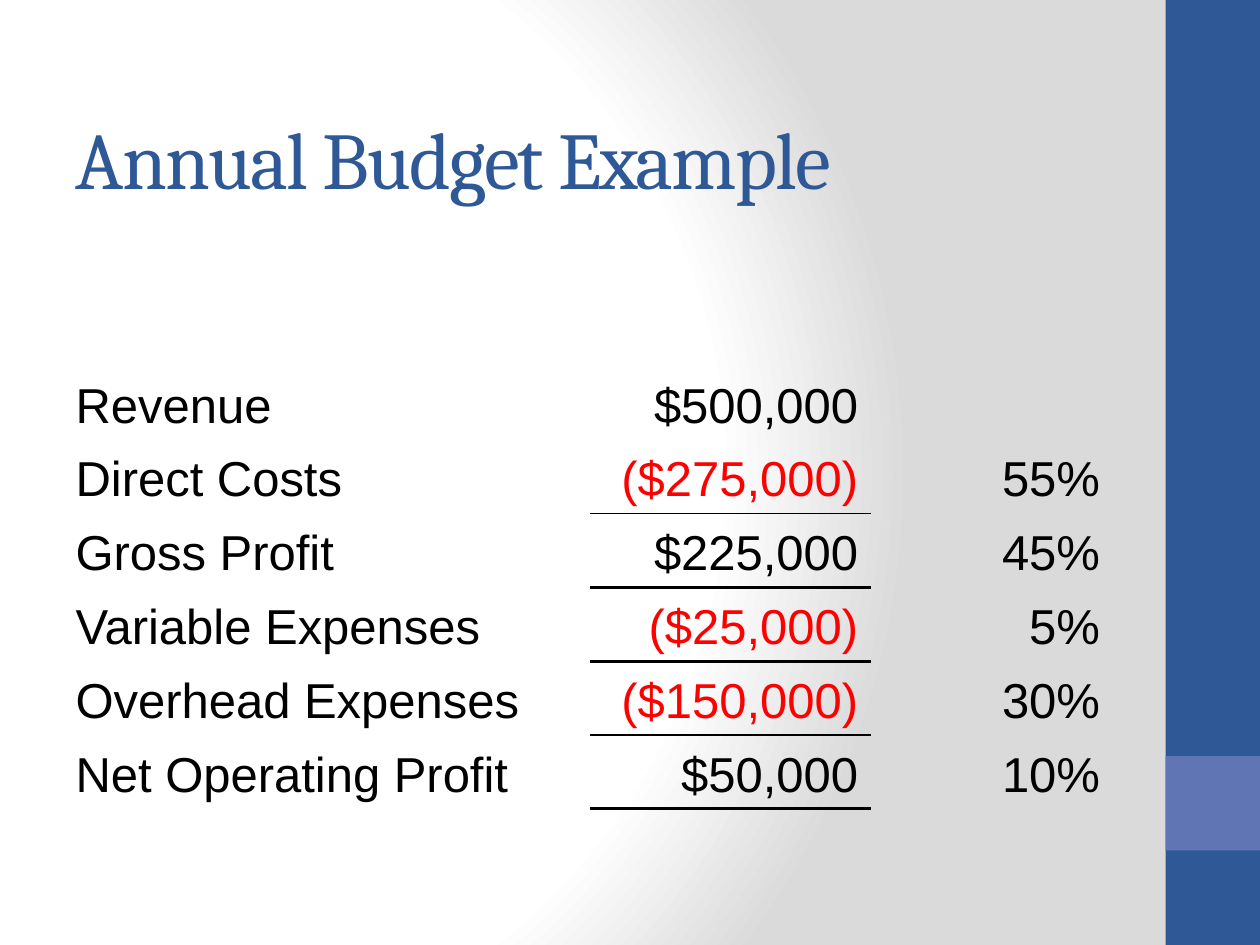
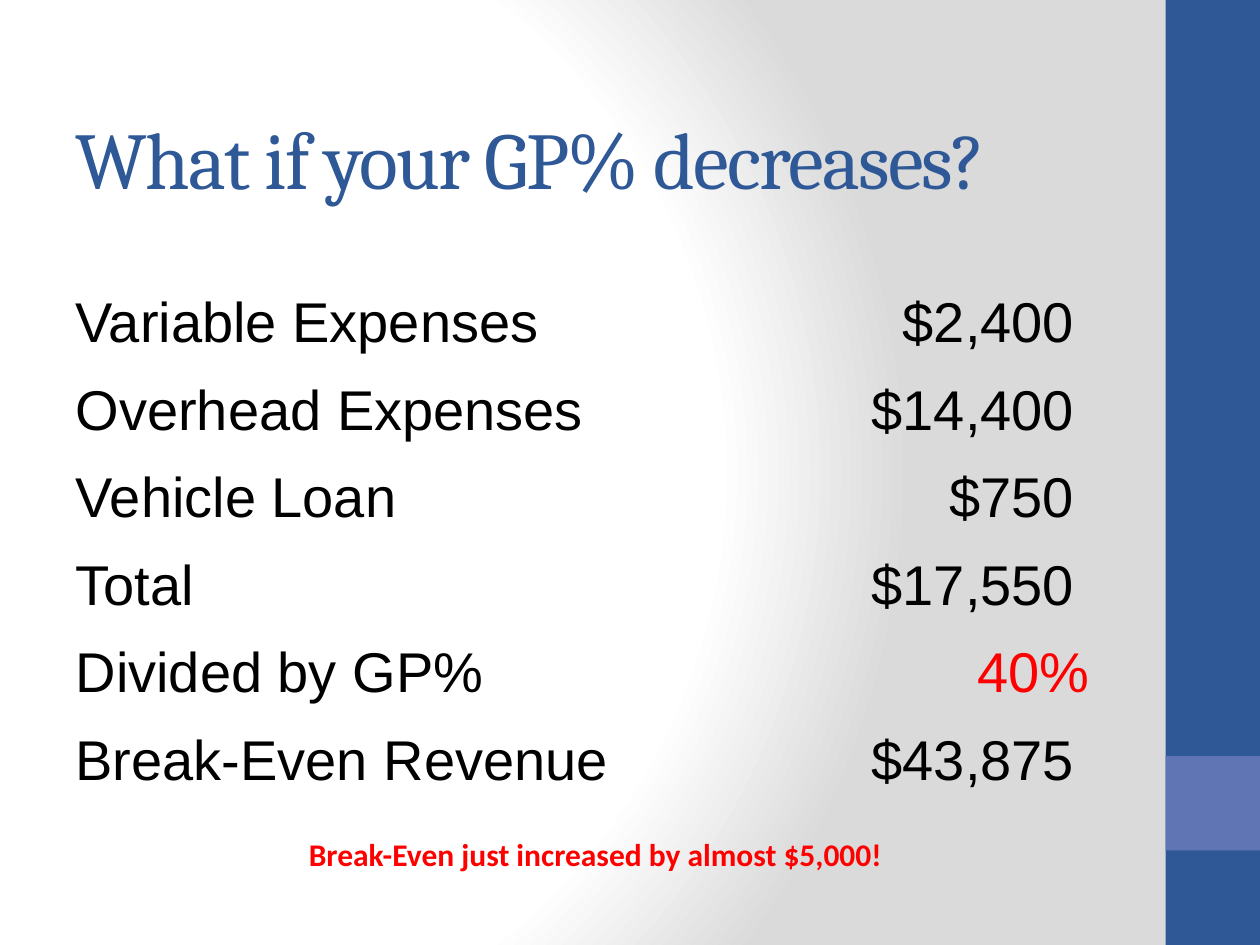
"""Build two budget slides: an annual budget example and a break-even what-if."""
from lxml.etree import SubElement
from pptx import Presentation
from pptx.dml.color import RGBColor
from pptx.enum.shapes import MSO_SHAPE
from pptx.enum.text import MSO_ANCHOR, MSO_AUTO_SIZE, PP_ALIGN
from pptx.oxml import parse_xml
from pptx.oxml.ns import nsdecls, qn
from pptx.util import Pt

EMU_PER_PX = 9144
BLUE = RGBColor(0x2F, 0x58, 0x97)
PERIWINKLE = RGBColor(0x60, 0x76, 0xB4)
BLACK = RGBColor(0, 0, 0)
RED = RGBColor(0xFF, 0, 0)
NO_TABLE_STYLE = "{2D5ABB26-0587-4C30-8999-92F81FD0307C}"
BACKGROUND = f"""<p:bg {nsdecls("p", "a")}><p:bgPr><a:gradFill rotWithShape="1"><a:gsLst>
<a:gs pos="0"><a:srgbClr val="FFFFFF"/></a:gs>
<a:gs pos="75000"><a:srgbClr val="FFFFFF"/></a:gs>
<a:gs pos="100000"><a:srgbClr val="DADADA"/></a:gs></a:gsLst>
<a:path path="circle"><a:fillToRect l="20000" t="50000" r="100000" b="50000"/></a:path>
</a:gradFill><a:effectLst/></p:bgPr></p:bg>"""


def px(*lengths):
    return [length * EMU_PER_PX for length in lengths]


def add_statement(slide, entries, box, column_widths, size):
    table = slide.shapes.add_table(len(entries), len(column_widths), *px(*box)).table
    table.first_row = table.horz_banding = False
    table._tbl.tblPr.find(qn("a:tableStyleId")).text = NO_TABLE_STYLE
    for column, width in zip(table.columns, px(*column_widths)):
        column.width = width
    for row, entry in enumerate(entries):
        for column, text in enumerate(entry):
            cell = table.cell(row, column)
            cell.fill.background()
            cell.vertical_anchor = MSO_ANCHOR.BOTTOM
            cell.text_frame.text = text
            paragraph = cell.text_frame.paragraphs[0]
            paragraph.alignment = PP_ALIGN.RIGHT if column else PP_ALIGN.LEFT
            properties = paragraph._p.get_or_add_pPr()
            indent, = px(38)
            properties.set("marL", str(indent))
            properties.set("indent", str(-indent))
            for run in paragraph.runs:
                run.font.name = "Arial"
                run.font.size = Pt(size)
                run.font.color.rgb = RED if text.startswith("(") or text == "40%" else BLACK
    return table


presentation = Presentation()
presentation.slide_width, presentation.slide_height = px(1000, 750)
title_only = presentation.slide_layouts[5]
master = presentation.slide_master

old_background = master.element.cSld.find(qn("p:bg"))
if old_background is not None:
    master.element.cSld.remove(old_background)
master.element.cSld.insert(0, parse_xml(BACKGROUND))

slides = []
for heading in ("Annual Budget Example", "What if your GP% decreases?"):
    slide = presentation.slides.add_slide(title_only)
    title = slide.shapes.title
    title.left, title.top, title.width, title.height = px(50, 50, 900, 150)
    title.text_frame.text = heading
    title.text_frame.auto_size = MSO_AUTO_SIZE.NONE
    title.text_frame.vertical_anchor = MSO_ANCHOR.MIDDLE
    paragraph = title.text_frame.paragraphs[0]
    paragraph.alignment = PP_ALIGN.LEFT
    font = paragraph.runs[0].font
    font.name, font.size, font.color.rgb = "Cambria", Pt(46), BLUE
    paragraph.runs[0]._r.get_or_add_rPr().set("spc", "-100")
    slides.append(slide)
budget_slide, break_even_slide = slides

side_bands = [(0, 750, BLUE), (600, 75, PERIWINKLE)]
for order, (top, height, colour) in enumerate(side_bands):
    band = budget_slide.shapes.add_shape(MSO_SHAPE.RECTANGLE, *px(925, top, 75, height))
    band.shadow.inherit = False
    band.fill.solid()
    band.fill.fore_color.rgb = colour
    band.line.fill.background()
    band.element.nvSpPr.cNvPr.set("id", str(100 + order))
    master.shapes.element.insert(2 + order, band.element)

budget = [
    ("Revenue", "$500,000", ""),
    ("Direct Costs", "($275,000)", "55%"),
    ("Gross Profit", "$225,000", "45%"),
    ("Variable Expenses", "($25,000)", "5%"),
    ("Overhead Expenses", "($150,000)", "30%"),
    ("Net Operating Profit", "$50,000", "10%"),
]
budget_table = add_statement(budget_slide, budget, (50, 225, 833, 417), (418, 223, 192), 28)
first_height, remaining_height = px(124, 417 - 124)
for row, budget_row in enumerate(budget_table.rows):
    budget_row.height = remaining_height // (len(budget) - 1) if row else first_height

for ruled_row, weight in ((1, 1), (2, 2), (4, 1), (5, 2)):
    for edge, row in (("a:lnB", ruled_row), ("a:lnT", ruled_row + 1)):
        if row < len(budget):
            cell_properties = budget_table.cell(row, 1)._tc.get_or_add_tcPr()
            rule = SubElement(cell_properties, qn(edge), w=str(Pt(weight)))
            SubElement(SubElement(rule, qn("a:solidFill")), qn("a:srgbClr"), val=str(BLACK))
            cell_properties.find(qn("a:noFill")).addprevious(rule)

break_even = [
    ("Variable Expenses", "$2,400 "),
    ("Overhead Expenses", "$14,400 "),
    ("Vehicle Loan", "$750 "),
    ("Total", "$17,550 "),
    ("Divided by GP%", "40%"),
    ("Break-Even Revenue", "$43,875 "),
]
add_statement(break_even_slide, break_even, (50, 217, 825, 417), (526, 299), 32)

conclusion = break_even_slide.shapes.add_textbox(*px(167, 658, 617, 40)).text_frame
conclusion.word_wrap = True
conclusion.auto_size = MSO_AUTO_SIZE.SHAPE_TO_FIT_TEXT
conclusion.text = "Break-Even just increased by almost $5,000! "
conclusion.paragraphs[0].alignment = PP_ALIGN.CENTER
font = conclusion.paragraphs[0].runs[0].font
font.name, font.size, font.bold, font.color.rgb = "Calibri", Pt(18), True, RED

presentation.save("out.pptx")
